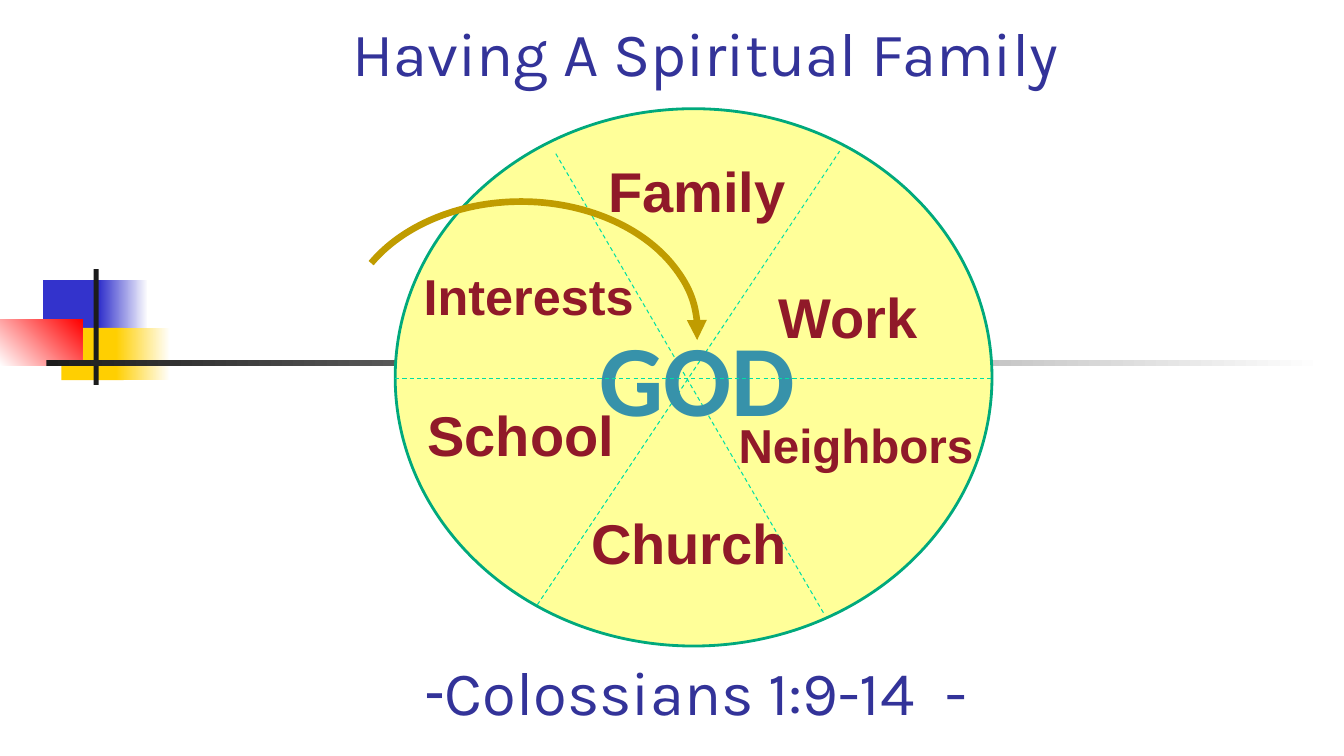
import pptx
import pptx.util
import pptx.dml.color
import pptx.enum.dml
import pptx.enum.shapes
import pptx.enum.text
import pptx.oxml.ns
import lxml.etree

Cm, Pt = pptx.util.Cm, pptx.util.Pt
SHAPES = pptx.enum.shapes.MSO_SHAPE
ANCHOR = pptx.enum.text.MSO_ANCHOR

# Content: all boxes are left, top, width, height in cm
TITLE = "Having A Spiritual Family"
TITLE_BOX = (6.99, 0.64, 21.59, 1.73)
VERSE_PARTS = ("Colossians 1:9-14", " ", "-")
VERSE_BOX = (6.71, 16.31, 21.64, 2.16)
HEADING = {"name": "Karla", "size": Pt(44), "bold": False}

# Box, colours (two make a gradient), gradient angle
DECORATION = [
    ((1.09, 7.06, 1.63, 1.32), ("3333CC",), 0),
    ((2.51, 7.06, 1.22, 1.32), ("3333CC", "FFFFFF"), 0),
    ((1.55, 8.26, 1.57, 1.32), ("FFCF01",), 0),
    ((2.92, 8.26, 1.37, 1.32), ("FFCF01", "FFFFFF"), 0),
    ((0, 8.05, 2.08, 1.17), ("FFFFFF", "FF0000"), 45),
    ((2.36, 6.78, 0.13, 2.92), ("1C1C1C",), 0),
    ((1.17, 9.07, 32.21, 0.15), ("1C1C1C", "FFFFFF"), 0),
]

WHEEL_BOX = (9.96, 2.74, 15.04, 13.54)
DIAGONAL_SPOKES = [(13.54, 15.24, 21.16, 3.81), (20.75, 15.44, 13.97, 3.81)]
LEVEL_SPOKE = (9.96, 9.53, 24.97, 9.53)
ARC_BOX = (8.69, 5.08, 8.89, 6.55)
ARC_ANGLES = (122.7, 1.66)

CENTER_BOX = (13.97, 7.82, 7.19, 4.24)
LABEL_SIZE = (7.19, 1.9)
# Text, left, top, point size
LABELS = [
    ("Family", 13.97, 3.81, 40),
    ("Neighbors", 17.98, 10.36, 34),
    ("School", 9.53, 9.96, 40),
    ("Church", 13.77, 12.7, 40),
    ("Work", 17.78, 6.99, 40),
    ("Interests", 9.73, 6.55, 36),
]


def color(value):
    return pptx.dml.color.RGBColor.from_string(value)


def lengths(values):
    return [Cm(value) for value in values]


def add_shape(slide, kind, box):
    shape = slide.shapes.add_shape(kind, *lengths(box))
    shape.shadow.inherit = False
    return shape


def set_line(line, value, width):
    line.color.rgb = color(value)
    line.width = Pt(width)


def add_child(parent, tag, **attributes):
    child = lxml.etree.SubElement(parent, pptx.oxml.ns.qn(tag))
    for name, value in attributes.items():
        child.set(name, value)


def add_block(slide, box, data):
    shape = add_shape(slide, SHAPES.RECTANGLE, box)
    colors, angle = data
    shape.line.fill.background()
    if len(colors) == 1:
        shape.fill.solid()
        shape.fill.fore_color.rgb = color(colors[0])
        return
    shape.fill.gradient()
    shape.fill.gradient_angle = angle
    for stop, value in zip(shape.fill.gradient_stops, colors):
        stop.color.rgb = color(value)


def add_spoke(slide, ends):
    spoke = slide.shapes.add_connector(
        pptx.enum.shapes.MSO_CONNECTOR.STRAIGHT, *lengths(ends))
    set_line(spoke.line, "00DFA4", 0.75)
    spoke.line.dash_style = pptx.enum.dml.MSO_LINE.DASH
    add_child(spoke._element.spPr, "a:effectLst")


def write(shape, parts, font, font_color, anchor):
    frame = shape.text_frame
    frame.word_wrap = True
    frame.auto_size = pptx.enum.text.MSO_AUTO_SIZE.NONE
    frame.vertical_anchor = anchor
    paragraph = frame.paragraphs[0]
    paragraph.alignment = pptx.enum.text.PP_ALIGN.CENTER
    for part in parts:
        run = paragraph.add_run()
        run.text = part
        for name, value in font.items():
            setattr(run.font, name, value)
        run.font.color.rgb = color(font_color)
    return paragraph


def add_label(slide, text, box, name, size, font_color):
    label = slide.shapes.add_textbox(*lengths(box))
    font = {"name": name, "size": Pt(size), "bold": True}
    paragraph = write(label, [text], font, font_color, ANCHOR.TOP)
    paragraph.space_after = Pt(10)


def add_wheel(slide):
    wheel = add_shape(slide, SHAPES.OVAL, WHEEL_BOX)
    wheel.fill.solid()
    wheel.fill.fore_color.rgb = color("FFFF99")
    set_line(wheel.line, "00A97C", 2)
    for ends in DIAGONAL_SPOKES:
        add_spoke(slide, ends)

    add_label(slide, "GOD", CENTER_BOX, "Calibri", 72, "3792AA")
    for text, left, top, size in LABELS:
        add_label(slide, text, (left, top, *LABEL_SIZE), "Arial", size, "901929")

    # Curved arrow into the centre
    arc = add_shape(slide, SHAPES.ARC, ARC_BOX)
    for index, angle in enumerate(ARC_ANGLES):
        arc.adjustments[index] = angle
    arc.fill.background()
    set_line(arc.line, "C09C00", 4.75)
    add_child(arc.line._get_or_add_ln(), "a:tailEnd", type="triangle")

    add_spoke(slide, LEVEL_SPOKE)


def add_verse(slide):
    verse = slide.shapes.add_textbox(*lengths(VERSE_BOX))
    paragraph = write(verse, VERSE_PARTS, HEADING, "333399", ANCHOR.BOTTOM)
    # Dash bullet directly before the text
    properties = paragraph._p.get_or_add_pPr()
    properties.set("marL", "0")
    properties.set("indent", "0")
    add_child(properties, "a:buFont", typeface="Arial")
    add_child(properties, "a:buChar", char="-")
    # Wider gap before the closing dash
    paragraph.runs[1].font._element.set("spc", "1100")


def main():
    presentation = pptx.Presentation()
    presentation.slide_width, presentation.slide_height = Cm(33.87), Cm(19.05)
    slide = presentation.slides.add_slide(presentation.slide_layouts[5])

    # Title
    title = slide.shapes.title
    title.left, title.top, title.width, title.height = lengths(TITLE_BOX)
    write(title, [TITLE], HEADING, "333399", ANCHOR.BOTTOM)

    # Coloured blocks and cross bars
    for box, *data in DECORATION:
        add_block(slide, box, data)

    add_wheel(slide)
    add_verse(slide)
    presentation.save("out.pptx")


if __name__ == "__main__":
    main()
